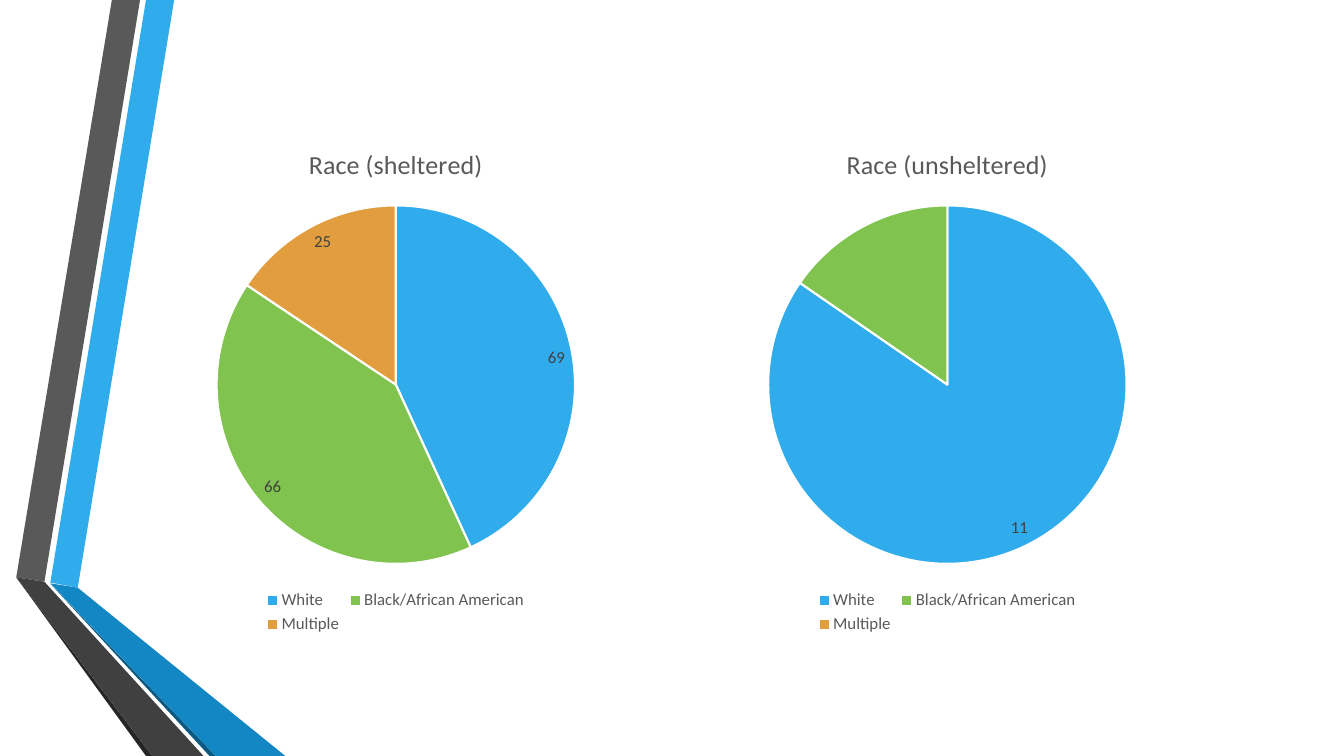
from lxml import etree
from pptx import Presentation
from pptx.chart.data import CategoryChartData as ChartData
from pptx.dml.color import RGBColor as Rgb
from pptx.enum.chart import XL_CHART_TYPE as Kind
from pptx.enum.chart import XL_LABEL_POSITION as Spot
from pptx.enum.chart import XL_LEGEND_POSITION as Side
from pptx.oxml import parse_xml
from pptx.oxml.ns import nsdecls, qn
from pptx.util import Cm, Pt

FONT = "Calibri"
COLORS = {
    "blue": "30ACEC", "green": "80C34F", "orange": "E29D3E",
    "deep": "1287C3", "navy": "0C5A82",
    "grey": "595959", "coal": "404040", "black": "262626", "white": "FFFFFF",
}
RACES = {"White": "blue", "Black/African American": "green", "Multiple": "orange"}
# Corner points in cm, from back to front
RIBBONS = [
    ("blue", [(1.27, 14.68), (1.96, 14.81), (4.39, 0), (3.68, 0)]),
    ("grey", [(3.53, 0), (2.82, 0), (0.41, 14.55), (1.12, 14.66)]),
    ("black", [(0.41, 14.55), (3.68, 19.05), (3.84, 19.05)]),
    ("navy", [(1.27, 14.71), (5.28, 19.05), (5.44, 19.05)]),
    ("deep", [(1.27, 14.7), (5.44, 19.05), (7.19, 19.05), (1.96, 14.81)]),
    ("coal", [(5.13, 19.05), (1.12, 14.66), (0.41, 14.55), (3.84, 19.05)]),
]
PIES = [
    ("Race (sheltered)", (69, 66, 25), None),
    ("Race (unsheltered)", (11, 2, 0), 0),
]


def tint(name):
    return Rgb.from_string(COLORS[name])


def style(font, size, color):
    font.name, font.size, font.bold = FONT, Pt(size), False
    font.color.rgb = tint(color)


def draw_ribbons(slide, left, top):
    for color, spots in RIBBONS:
        first, *rest = [(left + Cm(x), top + Cm(y)) for x, y in spots]
        pen = slide.shapes.build_freeform(*first)
        pen.add_line_segments(rest, close=True)
        band = pen.convert_to_shape()
        band.shadow.inherit = False
        band.fill.solid()
        band.fill.fore_color.rgb = tint(color)
        band.line.fill.background()


def place_plot(chart, x, y, w, h):
    """Fix the inner plot area, in shares of the chart's box."""
    area = chart.plots[0]._element.getparent()
    for old in area.findall(qn("c:layout")):
        area.remove(old)
    layout = parse_xml(f"<c:layout {nsdecls('c')}><c:manualLayout/></c:layout>")
    parts = [("layoutTarget", "inner"), ("xMode", "edge"), ("yMode", "edge"),
             ("x", x), ("y", y), ("w", w), ("h", h)]
    for tag, val in parts:
        etree.SubElement(layout[0], qn(f"c:{tag}")).set("val", str(val))
    area.insert(0, layout)


def draw_pie(slide, box, title, counts, only):
    """Draw one pie; only is the index of the sole labelled slice, or None for all."""
    data = ChartData()
    data.categories = list(RACES)
    data.add_series("Series 1", counts)
    chart = slide.shapes.add_chart(Kind.PIE, *box, data).chart
    chart.font.name, chart.font.size = FONT, Pt(10)

    chart.has_title = True
    run = chart.chart_title.text_frame.paragraphs[0].add_run()
    run.text = title
    style(run.font, 18.6, "grey")
    chart.chart_title.include_in_layout = False

    chart.has_legend = True
    chart.legend.position = Side.BOTTOM
    chart.legend.include_in_layout = False
    style(chart.legend.font, 12, "grey")

    plot = chart.plots[0]
    plot.vary_by_categories = True
    row = plot.series[0]
    for i, color in enumerate(RACES.values()):
        form = row.points[i].format
        form.fill.solid()
        form.fill.fore_color.rgb = tint(color)
        form.line.color.rgb = tint("white")
        form.line.width = Pt(1.5)

    if only is None:
        label = row.data_labels
        label.show_value = True
    else:
        row.data_labels.show_value = False
        label = row.points[only].data_label
    style(label.font, 12, "coal")
    label.position = Spot.INSIDE_END
    place_plot(chart, 0.115, 0.154, 0.77, 0.702)


def draw_pies(slide, left, top, width, height, step):
    for i, pie in enumerate(PIES):
        draw_pie(slide, (left + i * step, top, width, height), *pie)


def main():
    deck = Presentation()
    deck.slide_width, deck.slide_height = Cm(33.87), Cm(19.05)
    slide = deck.slides.add_slide(deck.slide_layouts[6])
    slide.background.fill.solid()
    slide.background.fill.fore_color.rgb = tint("white")
    draw_ribbons(slide, Cm(0), Cm(0))
    draw_pies(slide, Cm(4.11), Cm(3.18), Cm(11.73), Cm(12.9), Cm(13.9))
    deck.save("out.pptx")


if __name__ == "__main__":
    main()
